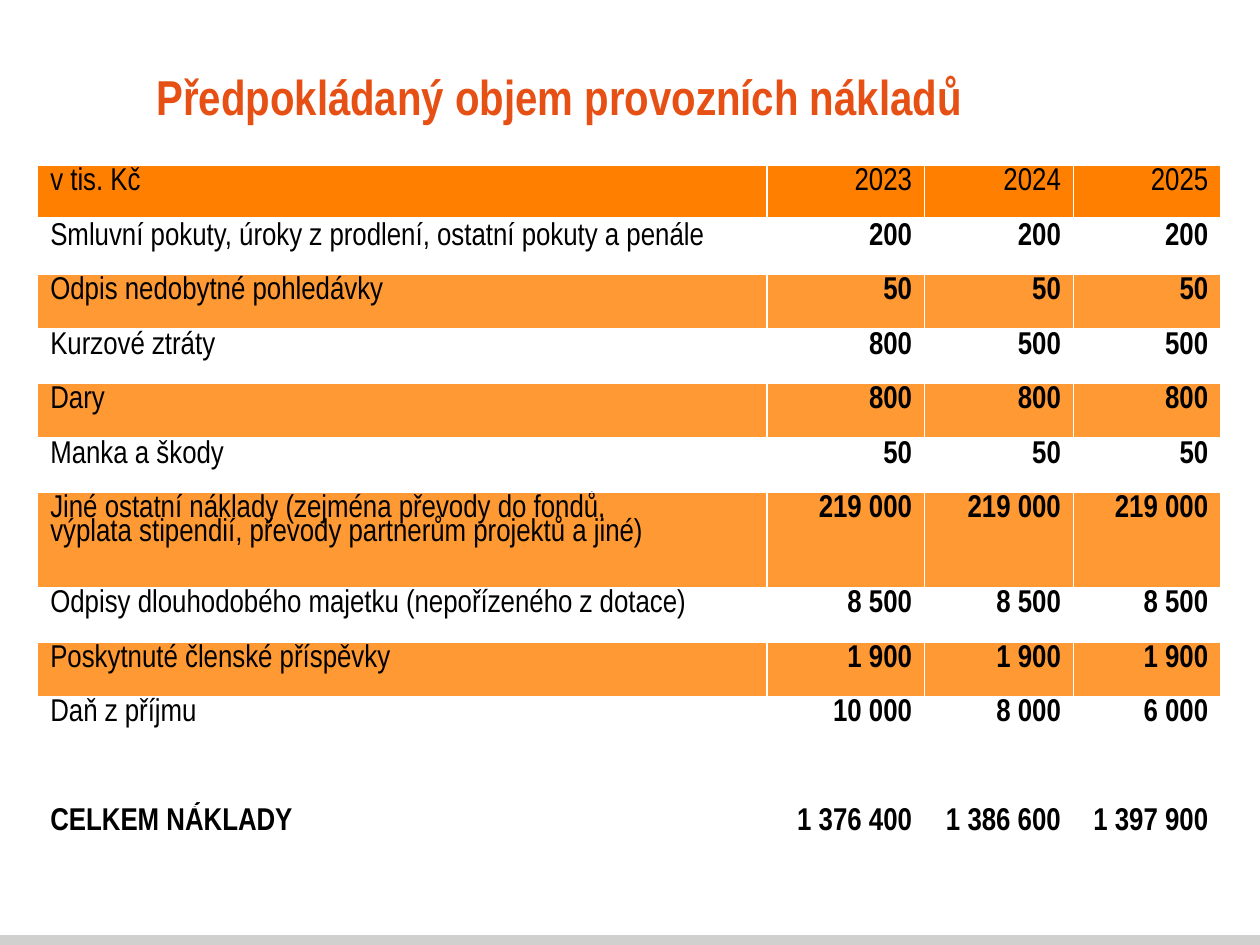
import dataclasses

import lxml.etree
import pptx
import pptx.dml.color
import pptx.enum.shapes
import pptx.enum.text
import pptx.oxml.ns
import pptx.util

Cm = pptx.util.Cm
Pt = pptx.util.Pt
Rgb = pptx.dml.color.RGBColor.from_string
Align = pptx.enum.text.PP_ALIGN


@dataclasses.dataclass(frozen=True)
class Theme:
    """Hold the colours, font and type sizes."""
    font: str = "Arial Narrow"
    title: str = "E65014"
    text: str = "000000"
    head: str = "FF8001"
    band: str = "FF9933"
    plain: str = "FFFFFF"
    foot: str = "D0D0CE"
    large: int = 28
    small: int = 18


THEME = Theme()
TITLE = "Předpokládaný objem provozních nákladů"
WIDTHS = 14.7, 3.18, 3, 2.97
ROW, TALL = 1.1, 1.91
ROWS = [
    ("v tis. Kč", "2023", "2024", "2025"),
    ("Smluvní pokuty, úroky z prodlení, ostatní pokuty a penále", "200", "200", "200"),
    ("Odpis nedobytné pohledávky", "50", "50", "50"),
    ("Kurzové ztráty", "800", "500", "500"),
    ("Dary", "800", "800", "800"),
    ("Manka a škody", "50", "50", "50"),
    ("Jiné ostatní náklady (zejména převody do fondů,\n"
     "výplata stipendií, převody partnerům projektů a jiné)",
     "219 000", "219 000", "219 000"),
    ("Odpisy dlouhodobého majetku (nepořízeného z dotace)", "8 500", "8 500", "8 500"),
    ("Poskytnuté členské příspěvky", "1 900", "1 900", "1 900"),
    ("Daň z příjmu", "10 000", "8 000", "6 000"),
    ("", "", "", ""),
    ("CELKEM NÁKLADY", "1 376 400", "1 386 600", "1 397 900"),
]


def style(para, size, color, bold):
    """Set the font of a paragraph."""
    font = para.font
    font.name, font.size, font.bold = THEME.font, Pt(size), bold
    font.color.rgb = Rgb(color)


def add_title(slide, box):
    """Fill and place the title."""
    shape = slide.shapes.title
    shape.left, shape.top, shape.width, shape.height = map(Cm, box)
    frame = shape.text_frame
    frame.text = TITLE
    frame.auto_size = pptx.enum.text.MSO_AUTO_SIZE.NONE
    frame.vertical_anchor = pptx.enum.text.MSO_ANCHOR.MIDDLE
    para = frame.paragraphs[0]
    para.alignment = Align.LEFT
    style(para, THEME.large, THEME.title, True)


def add_edges(cell, base):
    """Draw white edges around a cell."""
    props = cell._tc.get_or_add_tcPr()
    qn = pptx.oxml.ns.qn
    for side, width in zip("LRTB", (1, 1, 1, base)):
        line = lxml.etree.SubElement(props, qn(f"a:ln{side}"), w=str(Pt(width)))
        fill = lxml.etree.SubElement(line, qn("a:solidFill"))
        lxml.etree.SubElement(fill, qn("a:srgbClr"), val=THEME.plain)


def fill_cell(cell, text, color, bold, align, base):
    """Write and format one cell."""
    add_edges(cell, base)
    cell.fill.solid()
    cell.fill.fore_color.rgb = Rgb(color)
    cell.text = text
    for para in cell.text_frame.paragraphs:
        para.alignment = align
        para.line_spacing = 0.8
        style(para, THEME.small, THEME.text, bold)


def add_costs(slide, box):
    """Build the table of costs."""
    frame = slide.shapes.add_table(len(ROWS), len(WIDTHS), *map(Cm, box))
    table = frame.table
    for col, width in zip(table.columns, WIDTHS):
        col.width = Cm(width)
    last = len(ROWS) - 1
    for i, row in enumerate(ROWS):
        table.rows[i].height = Cm(TALL if "\n" in row[0] else ROW)
        banded = i % 2 == 0 and any(row)
        color = THEME.head if i == 0 else THEME.band if banded else THEME.plain
        for j, text in enumerate(row):
            bold = i == last or (i > 0 and j > 0)
            align = Align.RIGHT if j else Align.LEFT
            fill_cell(table.cell(i, j), text, color, bold, align, 1 if i else 3)


def add_foot(slide, box):
    """Draw the strip at the foot."""
    kind = pptx.enum.shapes.MSO_SHAPE.RECTANGLE
    strip = slide.shapes.add_shape(kind, *map(Cm, box))
    strip.shadow.inherit = False
    strip.fill.solid()
    strip.fill.fore_color.rgb = Rgb(THEME.foot)
    strip.line.fill.background()


def main():
    """Build and save the slide."""
    deck = pptx.Presentation()
    deck.slide_width, deck.slide_height = Cm(25.4), Cm(19.05)
    slide = deck.slides.add_slide(deck.slide_layouts[5])
    add_foot(slide, (0, 18.85, 25.4, 0.2))
    add_title(slide, (2.9, 0.91, 20.6, 2.06))
    add_costs(slide, (0.76, 3.33, sum(WIDTHS), ROW * (len(ROWS) - 1) + TALL))
    deck.save("out.pptx")


if __name__ == "__main__":
    main()
